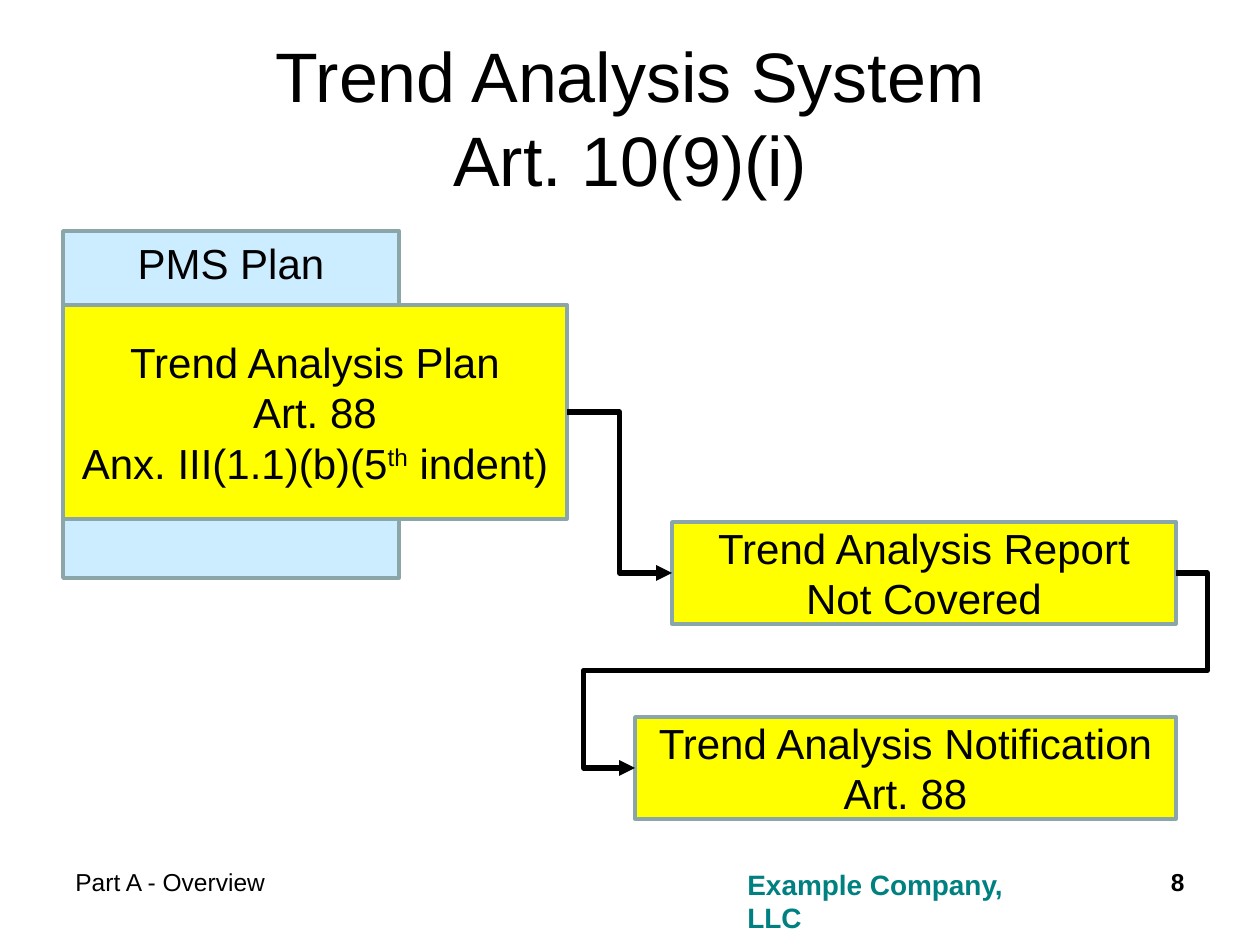
from dataclasses import dataclass

from lxml.etree import SubElement
from pptx import Presentation
from pptx.dml.color import RGBColor
from pptx.enum.shapes import MSO_CONNECTOR, MSO_SHAPE
from pptx.enum.text import MSO_ANCHOR, PP_ALIGN
from pptx.oxml.ns import qn
from pptx.util import Pt

PIXEL = 914400 / 126
COLORS = {
    "text": "000000",
    "brand": "008080",
    "plan": "CCECFF",
    "trend": "FFFF00",
    "border": "8AA6A8",
}
LEFT_SITE, RIGHT_SITE = 1, 3


@dataclass
class TextItem:
    """Text in a frame; a part between ^ marks is superscript."""
    left: int
    top: int
    width: int
    height: int
    text: str
    size: int = 24
    bold: bool = False
    color: str = "text"
    align: PP_ALIGN = PP_ALIGN.CENTER
    anchor: MSO_ANCHOR = MSO_ANCHOR.MIDDLE
    fill: str = ""


@dataclass
class Link:
    start: int
    end: int
    preset: str
    adjustments: tuple[int, ...]


def px(value: float) -> int:
    return round(value * PIXEL)


def color(name: str) -> RGBColor:
    return RGBColor.from_string(COLORS[name])


def write_text(shape, item: TextItem) -> None:
    frame = shape.text_frame
    for name, value in {"word_wrap": True, "vertical_anchor": item.anchor}.items():
        setattr(frame, name, value)
    run_format = {"name": "Arial", "size": Pt(item.size), "bold": item.bold}
    for index, line in enumerate(item.text.split("\n")):
        paragraph = frame.add_paragraph() if index else frame.paragraphs[0]
        paragraph.alignment = item.align
        for part_index, part in enumerate(line.split("^")):
            run = paragraph.add_run()
            run.text = part
            for name, value in run_format.items():
                setattr(run.font, name, value)
            run.font.color.rgb = color(item.color)
            if part_index % 2:
                run.font._element.set("baseline", "30000")


def draw_item(slide, item: TextItem):
    bounds = [px(value) for value in (item.left, item.top, item.width, item.height)]
    if item.fill:
        shape = slide.shapes.add_shape(MSO_SHAPE.RECTANGLE, *bounds)
        shape.shadow.inherit = False
        shape.fill.solid()
        shape.fill.fore_color.rgb = color(item.fill)
        shape.line.color.rgb = color("border")
        shape.line.width = Pt(2)
    else:
        shape = slide.shapes.add_textbox(*bounds)
    write_text(shape, item)
    return shape


def draw_link(slide, boxes: list, link: Link) -> None:
    connector = slide.shapes.add_connector(MSO_CONNECTOR.ELBOW, 0, 0, 0, 0)
    connector.begin_connect(boxes[link.start], RIGHT_SITE)
    connector.end_connect(boxes[link.end], LEFT_SITE)
    connector.line.color.rgb = color("text")
    connector.line.width = Pt(3)
    properties = connector._element.spPr
    # Bend positions
    geometry = properties.find(qn("a:prstGeom"))
    geometry.set("prst", link.preset)
    guides = geometry.find(qn("a:avLst"))
    if guides is None:
        guides = SubElement(geometry, qn("a:avLst"))
    for number, value in enumerate(link.adjustments, 1):
        SubElement(guides, qn("a:gd"), name=f"adj{number}", fmla=f"val {value}")
    # Arrowhead and no shadow
    SubElement(properties.find(qn("a:ln")), qn("a:tailEnd"), type="triangle")
    SubElement(properties, qn("a:effectLst"))


TEXTS = [
    TextItem(735, 861, 295, 47, "Example Company, LLC", 16, True, "brand",
             PP_ALIGN.LEFT, MSO_ANCHOR.TOP),
    TextItem(63, 38, 1134, 157, "Trend Analysis System\nArt. 10(9)(i)", 40),
    TextItem(63, 861, 651, 66, "Part A - Overview", 14,
             align=PP_ALIGN.LEFT, anchor=MSO_ANCHOR.TOP),
    TextItem(1061, 861, 136, 66, "8", 14, True,
             align=PP_ALIGN.RIGHT, anchor=MSO_ANCHOR.TOP),
]
BOXES = [
    TextItem(63, 231, 336, 347, "PMS Plan", anchor=MSO_ANCHOR.TOP, fill="plan"),
    TextItem(63, 305, 504, 214,
             "Trend Analysis Plan\nArt. 88\nAnx. III(1.1)(b)(5^th^ indent)", fill="trend"),
    TextItem(672, 522, 504, 102, "Trend Analysis Report\nNot Covered", fill="trend"),
    TextItem(635, 717, 541, 102, "Trend Analysis Notification\nArt. 88", fill="trend"),
]
LINKS = [
    Link(1, 2, "bentConnector3", (50000,)),
    Link(2, 3, "bentConnector5", (-5800, 50000, 109500)),
]


def main() -> None:
    presentation = Presentation()
    presentation.slide_width = px(1260)
    presentation.slide_height = px(945)
    slide = presentation.slides.add_slide(presentation.slide_layouts[6])

    # Title and footer
    for item in TEXTS:
        draw_item(slide, item)

    # Flow boxes and arrows
    boxes = [draw_item(slide, item) for item in BOXES]
    for link in LINKS:
        draw_link(slide, boxes, link)

    presentation.save("out.pptx")


if __name__ == "__main__":
    main()
